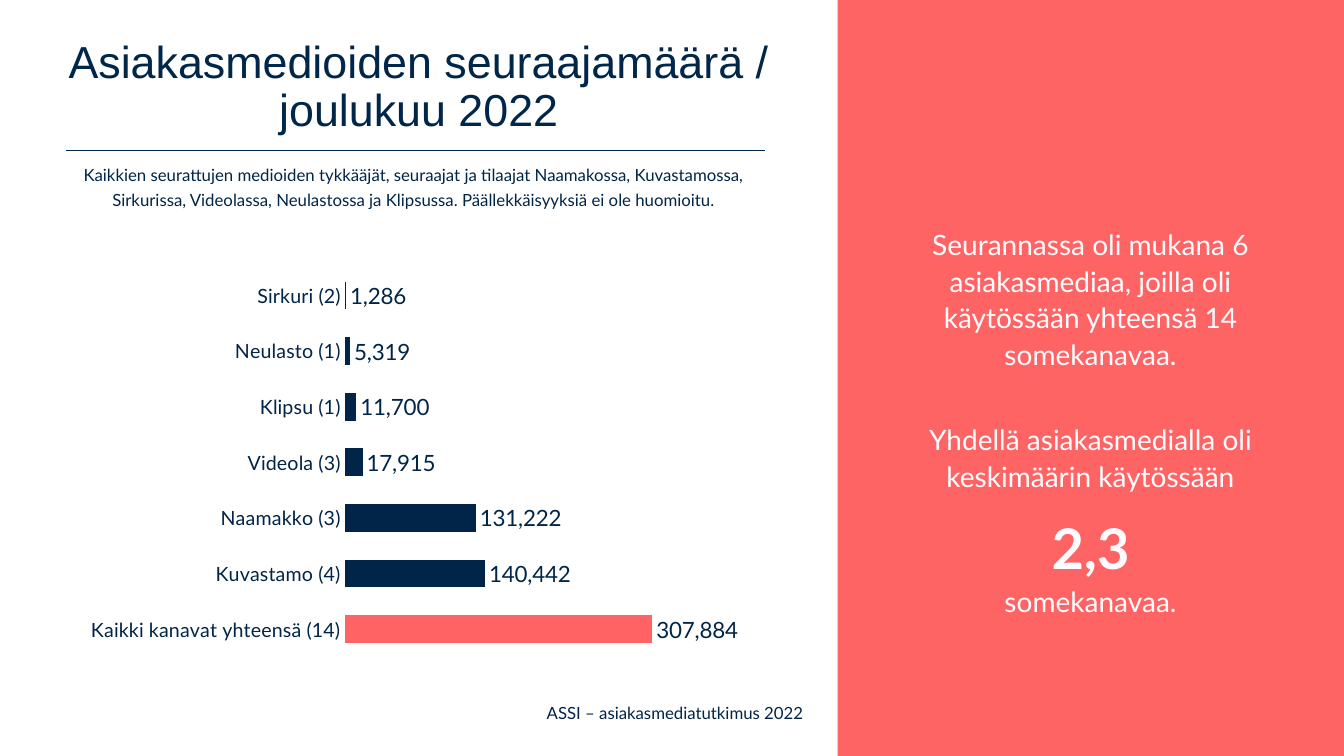
from lxml import etree
from pptx import Presentation
from pptx.chart import data
from pptx.dml.color import RGBColor
from pptx.enum import chart as ch, shapes, text
from pptx.oxml import ns
from pptx.util import Pt

NAVY = RGBColor(0x00, 0x25, 0x48)
INK = RGBColor(0x00, 0x26, 0x49)
CORAL = RGBColor(0xFF, 0x64, 0x64)
ROSE = RGBColor(0xFF, 0x63, 0x63)
PALE = RGBColor(0xFE, 0xFC, 0xFF)

TITLE = "Asiakasmedioiden seuraajamäärä / joulukuu 2022"
INTRO = (
    "Kaikkien seurattujen medioiden tykkääjät, seuraajat ja tilaajat "
    "Naamakossa, Kuvastamossa, Sirkurissa, Videolassa, Neulastossa ja "
    "Klipsussa. Päällekkäisyyksiä ei ole huomioitu."
)
FACTS = [
    ("Seurannassa oli mukana 6 asiakasmediaa, joilla oli käytössään "
     "yhteensä 14 somekanavaa.", 20, False, 0),
    ("Yhdellä asiakasmedialla oli keskimäärin käytössään", 20, False, 34),
    ("2,3", 40, True, 10),
    ("somekanavaa.", 20, False, 0),
]
COUNTS = {
    "Kaikki kanavat yhteensä (14)": 307884,
    "Kuvastamo (4)": 140442,
    "Naamakko (3)": 131222,
    "Videola (3)": 17915,
    "Klipsu (1)": 11700,
    "Neulasto (1)": 5319,
    "Sirkuri (2)": 1286,
}


class Deck:
    """Draws styled elements on the current slide."""

    def __init__(self, prs, face="Lato", color=NAVY):
        self.face, self.color = face, color
        self.slide = prs.slides.add_slide(prs.slide_layouts[6])

    def font(self, font, size, face=None, color=None, bold=False):
        font.name, font.size, font.bold = face or self.face, Pt(size), bold
        font.color.rgb = color or self.color

    def text(self, box, paras, lead, mid=True, face=None, color=None):
        frame = self.slide.shapes.add_textbox(*map(Pt, box)).text_frame
        frame.word_wrap = True
        anchor = text.MSO_ANCHOR
        frame.vertical_anchor = anchor.MIDDLE if mid else anchor.TOP
        for i, (words, size, bold, gap) in enumerate(paras):
            para = frame.add_paragraph() if i else frame.paragraphs[0]
            para.text = words
            para.alignment = text.PP_ALIGN.CENTER
            para.line_spacing = lead
            para.space_before = Pt(gap)
            self.font(para.font, size, face, color, bold)

    def panel(self, box, color):
        kind = shapes.MSO_SHAPE.RECTANGLE
        rect = self.slide.shapes.add_shape(kind, *map(Pt, box))
        rect.shadow.inherit = False
        rect.fill.solid()
        rect.fill.fore_color.rgb = color
        rect.line.fill.background()

    def rule(self, left, right, y):
        kind = shapes.MSO_CONNECTOR.STRAIGHT
        ends = map(Pt, (left, y, right, y))
        line = self.slide.shapes.add_connector(kind, *ends)
        line.line.color.rgb, line.line.width = INK, Pt(1)
        etree.SubElement(line._element.spPr, ns.qn("a:effectLst"))

    def bars(self, box, counts, plot):
        feed = data.CategoryChartData(number_format="#,##0")
        feed.categories = list(counts)
        feed.add_series("Series 1", list(counts.values()))
        kind = ch.XL_CHART_TYPE.BAR_CLUSTERED
        chart = self.slide.shapes.add_chart(kind, *map(Pt, box), feed).chart
        chart.has_legend = chart.has_title = False
        self.font(chart.font, 10, "Calibri")
        cat, val = chart.category_axis, chart.value_axis
        cat.major_tick_mark = ch.XL_TICK_MARK.NONE
        cat.format.line.fill.background()
        self.font(cat.tick_labels.font, 14)
        val.visible = val.has_major_gridlines = False
        val.minimum_scale, val.maximum_scale = 0, 350000
        group = chart.plots[0]
        group.gap_width, group.vary_by_categories = 100, False
        series = group.series[0]
        for item, tone in ((series, NAVY), (series.points[0], ROSE)):
            item.format.fill.solid()
            item.format.fill.fore_color.rgb = tone
        group.has_data_labels = True
        labels = group.data_labels
        labels.show_value = True
        labels.position = ch.XL_LABEL_POSITION.OUTSIDE_END
        labels.number_format = "#,##0"
        labels.number_format_is_linked = False
        self.font(labels.font, 16)
        self.place(chart, plot)

    def place(self, chart, plot):
        area = chart._chartSpace.chart.plotArea
        for old in area.findall(ns.qn("c:layout")):
            area.remove(old)
        layout = etree.Element(ns.qn("c:layout"))
        manual = etree.SubElement(layout, ns.qn("c:manualLayout"))
        rows = [("layoutTarget", "inner"), ("xMode", "edge"), ("yMode", "edge")]
        for tag, value in rows + list(zip("xywh", plot)):
            etree.SubElement(manual, ns.qn("c:" + tag)).set("val", str(value))
        area.insert(0, layout)


def main():
    prs = Presentation()
    prs.slide_width, prs.slide_height = Pt(960), Pt(540)
    deck = Deck(prs)
    footer = [("ASSI – asiakasmediatutkimus 2022", 12, False, 0)]
    deck.text((2.2, 503.3, 960, 13), footer, 0.9)
    deck.panel((598.4, 0, 361.6, 540), CORAL)
    deck.rule(47.5, 546.5, 107.3)
    deck.text((0, 18, 598.4, 90), [(TITLE, 32, False, 0)], 0.9,
              face="Arial", color=INK)
    deck.bars((39.6, 162.7, 558.7, 331.9), COUNTS, (0.37, 0.086, 0.447, 0.838))
    deck.text((46.8, 111.6, 497.5, 48.2), [(INTRO, 12, False, 0)], 1.2, mid=False)
    deck.text((635, 150.5, 288, 300.2), FACTS, 1.1, color=PALE)
    prs.save("out.pptx")


if __name__ == "__main__":
    main()
